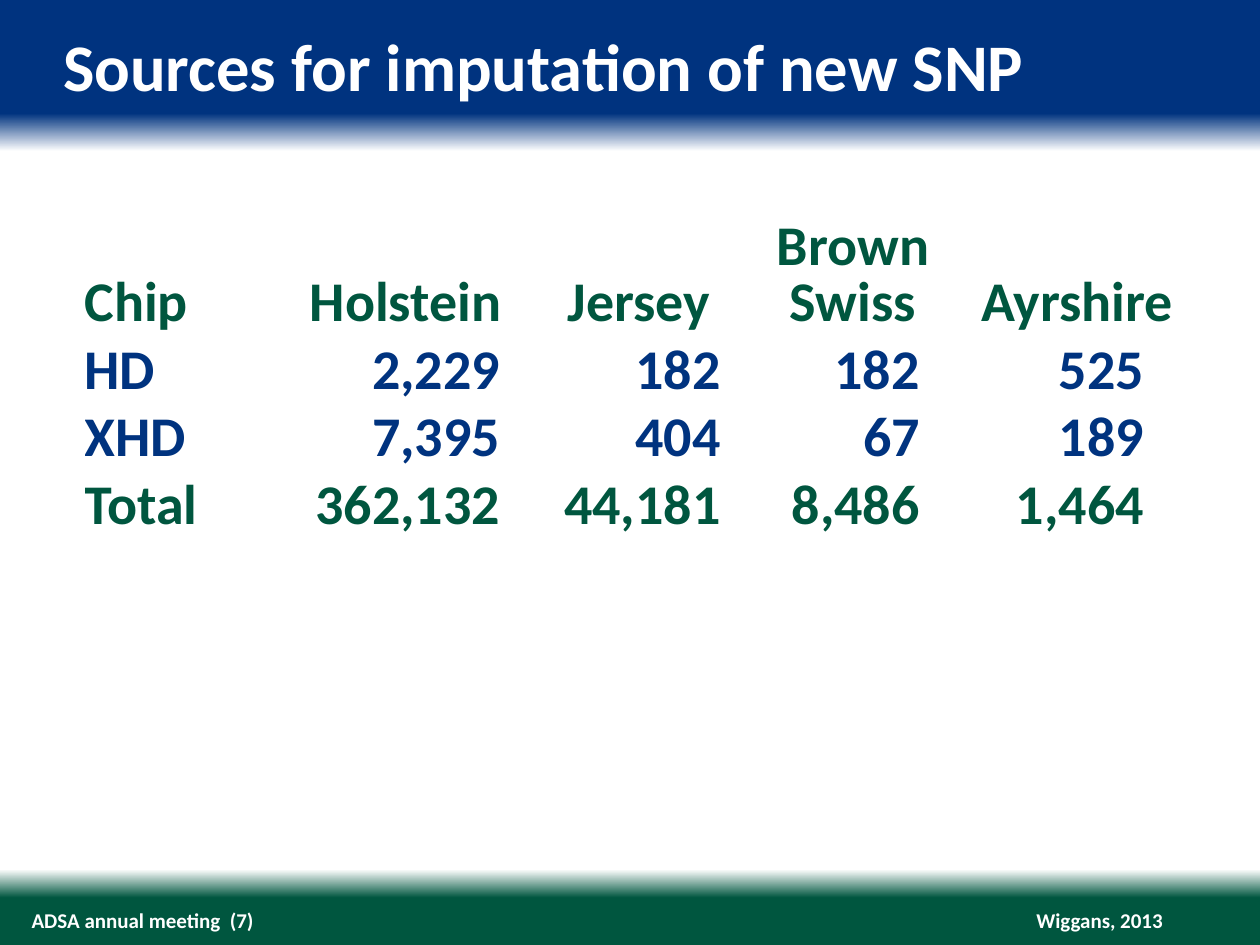
from lxml import etree
from pptx import Presentation
from pptx.dml.color import RGBColor
from pptx.enum import text
from pptx.oxml import ns
from pptx.util import Inches, Pt

# Content
TITLE = "Sources for imputation of new SNP"
HEAD = ["Chip", "Holstein", "Jersey", "Brown Swiss", "Ayrshire"]
ROWS = [
    ["HD", "2,229", "182", "182", "525"],
    ["XHD", "7,395", "404", "67", "189"],
    ["Total", "362,132", "44,181", "8,486", "1,464"],
]
LEFT, RIGHT, MID = text.PP_ALIGN.LEFT, text.PP_ALIGN.RIGHT, text.PP_ALIGN.CENTER
FOOT = [
    ("Wiggans, 2013", 8.21, 1.02, RIGHT, False),
    ("ADSA annual meeting  (7)", 0.25, 5.22, LEFT, True),
]

# Theme
THEME = {
    "font": "Calibri", "blue": "00337F", "green": "00563F", "white": "FFFFFF",
    "title": 38, "body": 32, "foot": 12,
}
FADE = [(0, "blue"), (12, "blue"), (16, "white"),
        (92, "white"), (95, "green"), (100, "green")]

# Table grid: text columns, with narrow gap columns between breeds
WIDTHS = [1.75, 1.6, 0.4, 1.3, 0.4, 1.3, 0.35, 1.56]
SLOTS = [0, 1, 3, 5, 7]
PADS = [0, 0.05, 0, 0.12, 0.25]
HEAD_H, ROW_H = 0.89, 0.53


def write(frame, words, size, color, align=LEFT):
    para = frame.paragraphs[0]
    para.alignment = align
    run = para.add_run()
    run.text = words
    font = run.font
    font.name, font.size, font.bold = THEME["font"], Pt(THEME[size]), True
    font.color.rgb = RGBColor.from_string(THEME[color])
    return para


def trim(box, right=0):
    box.margin_left = box.margin_top = box.margin_bottom = 0
    box.margin_right = Inches(right)


def paint(slide):
    fill = slide.background.fill
    fill.gradient()
    fill.gradient_angle = 270
    stops = slide.element.find(".//" + ns.qn("a:gsLst"))
    for stop in list(stops):
        stops.remove(stop)
    for pos, name in FADE:
        stop = etree.SubElement(stops, ns.qn("a:gs"), pos=str(pos * 1000))
        etree.SubElement(stop, ns.qn("a:srgbClr"), val=THEME[name])


def add_title(slide):
    title = slide.shapes.title
    title.left, title.top = Inches(0.5), Inches(0.2)
    title.width, title.height = Inches(9), Inches(0.64)
    frame = title.text_frame
    trim(frame)
    frame.auto_size = text.MSO_AUTO_SIZE.NONE
    frame.vertical_anchor = text.MSO_ANCHOR.TOP
    write(frame, TITLE, "title", "white")


def add_foot(slide):
    for words, left, width, align, wrap in FOOT:
        box = slide.shapes.add_textbox(
            Inches(left), Inches(7.2), Inches(width), Inches(0.2))
        frame = box.text_frame
        trim(frame)
        frame.word_wrap = wrap
        frame.vertical_anchor = text.MSO_ANCHOR.MIDDLE
        write(frame, words, "foot", "white", align)


def add_counts(slide):
    high = HEAD_H + ROW_H * len(ROWS)
    table = slide.shapes.add_table(
        len(ROWS) + 1, len(WIDTHS), Inches(0.67), Inches(1.78),
        Inches(sum(WIDTHS)), Inches(high)).table
    table.first_row = table.horz_banding = False
    for col, width in zip(table.columns, WIDTHS):
        col.width = Inches(width)
    for i, row in enumerate(table.rows):
        row.height = Inches(ROW_H if i else HEAD_H)
        for cell in row.cells:
            cell.fill.background()
            trim(cell)

    # Header
    for i, (slot, words) in enumerate(zip(SLOTS, HEAD)):
        cell = table.cell(0, slot)
        cell.vertical_anchor = text.MSO_ANCHOR.BOTTOM
        para = write(cell.text_frame, words, "body", "green", MID if i else LEFT)
        para.line_spacing = Pt(THEME["body"])

    # Counts, with the total in the header colour
    for i, row in enumerate(ROWS, 1):
        color = "green" if i == len(ROWS) else "blue"
        for slot, pad, words in zip(SLOTS, PADS, row):
            cell = table.cell(i, slot)
            trim(cell, pad)
            write(cell.text_frame, words, "body", color, RIGHT if slot else LEFT)


def main():
    deck = Presentation()
    deck.slide_width, deck.slide_height = Inches(10), Inches(7.5)
    slide = deck.slides.add_slide(deck.slide_layouts[5])
    paint(slide)
    add_foot(slide)
    add_title(slide)
    add_counts(slide)
    deck.save("out.pptx")


if __name__ == "__main__":
    main()
